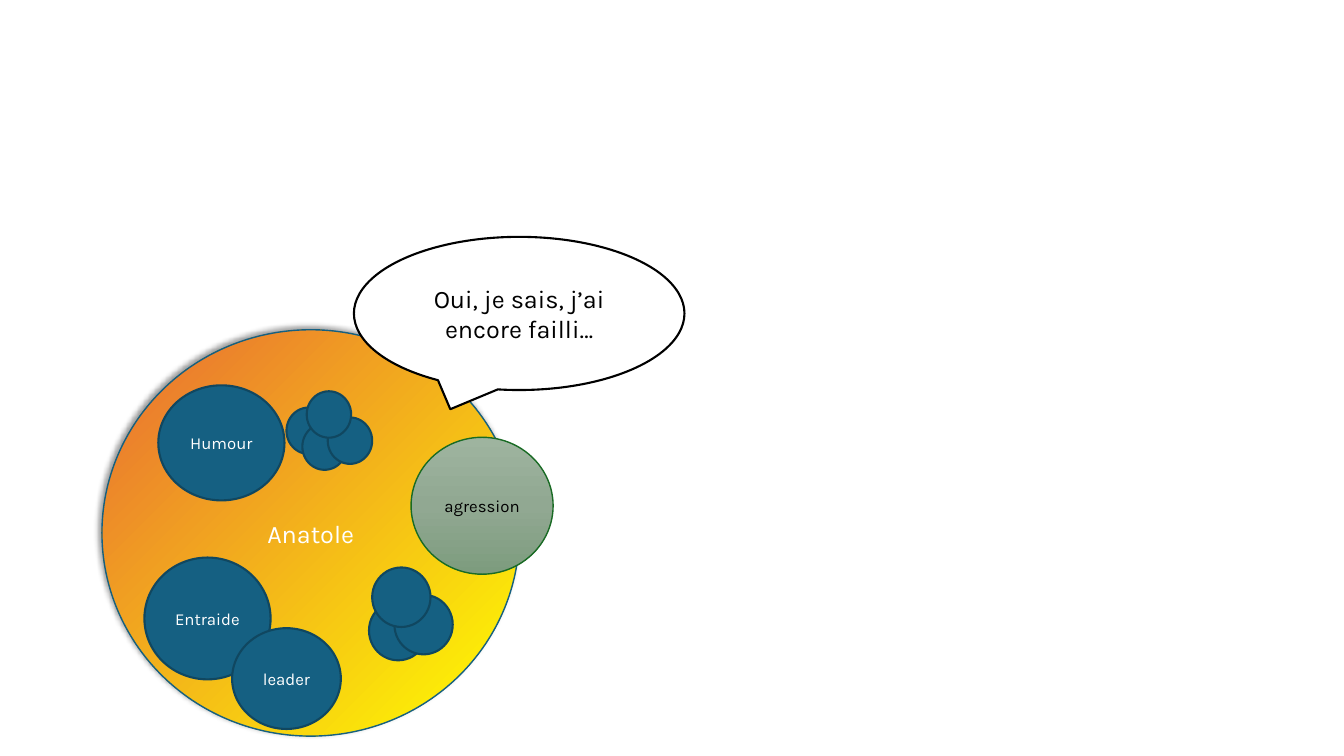
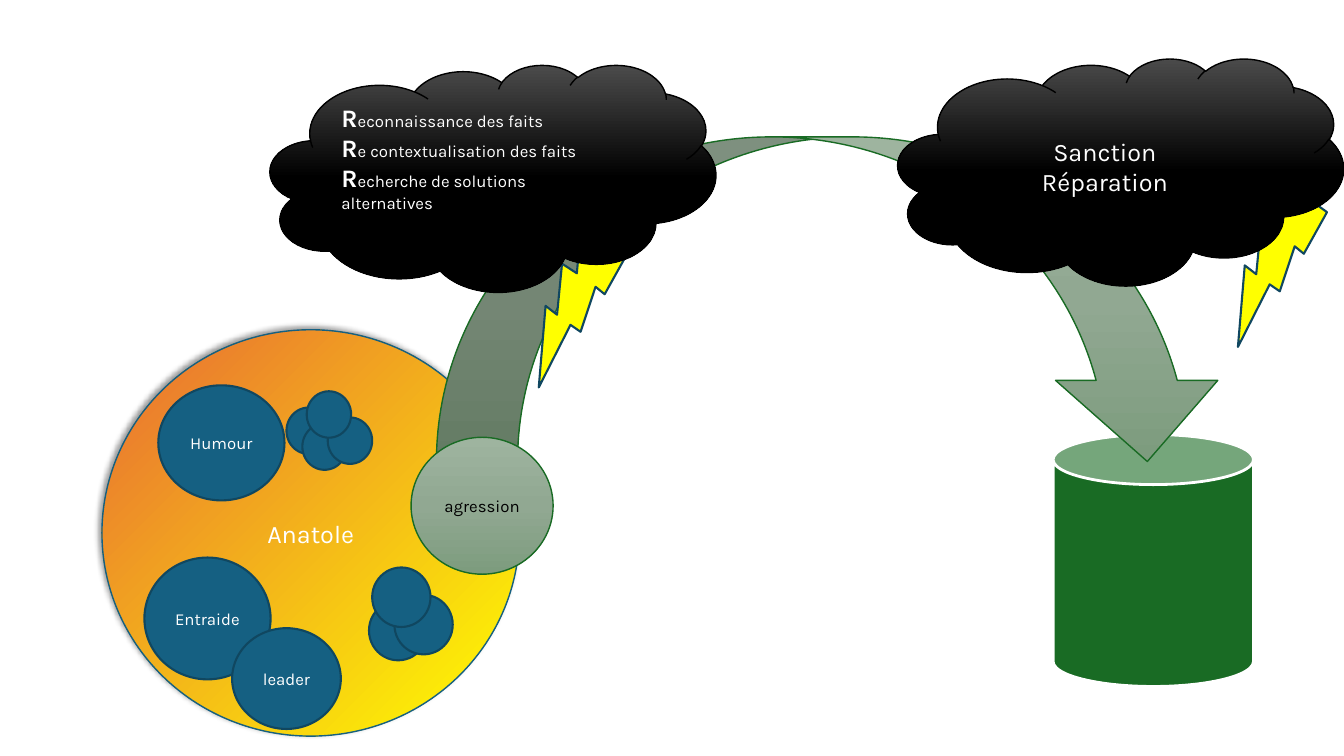
from lxml.etree import SubElement
from pptx import Presentation
from pptx.dml.color import RGBColor
from pptx.enum.shapes import MSO_SHAPE
from pptx.enum.text import MSO_ANCHOR, PP_ALIGN
from pptx.oxml.ns import qn
from pptx.util import Cm, Pt

FONT = "Karla"
WHITE, BLACK = "FFFFFF", "000000"
BLUE, DARK_BLUE = "156082", "104760"
GREEN, YELLOW = "196B24", "FFFF00"

# Gradients: clockwise angle, then (position in %, colour)
SUNNY = (225, [(0, YELLOW), (96, "E97132"), (100, "FFC000")])
SAGE = (90, [(0, "9EB49F"), (50, "91A892"), (100, "7D9C7E")])
STORM = (90, [(0, "4B4B4B"), (50, BLACK), (100, BLACK)])

# Boxes in cm: left, top, width, height
PERSON_BOX = (2.57, 8.31, 10.52, 10.24)
SPEECH_BOX = (8.92, 5.97, 8.33, 3.86)
CAN_BOX = (26.54, 10.95, 5.05, 6.35)
ARROW_BOX = (11, 3.45, 19.96, 8.18)
FACTS_BOX = (6.81, 1.63, 11.23, 5.72)
SANCTION_BOX = (22.63, 1.47, 11.23, 5.72)

# Traits, relative to the person's box
TRAITS = [
    ("Entraide", 1.07, 5.74, 3.18, 3.07),
    ("Humour", 1.42, 1.4, 3.18, 2.9),
    ("leader", 3.28, 7.52, 2.74, 2.54),
]
# Clusters of unnamed traits: size of a circle, then their places
CLUSTERS = [
    ((1.12, 1.17), [(4.65, 1.96), (5.05, 2.36), (5.69, 2.21), (5.16, 1.55)]),
    ((1.47, 1.5), [(6.73, 6.83), (7.37, 6.68), (6.81, 5.99)]),
]


def color(hex_value):
    return RGBColor.from_string(hex_value)


def inside(box, left, top, width, height):
    """Turn a place relative to a box into a place on the slide."""
    return box[0] + left, box[1] + top, width, height


def paint_gradient(shape, angle, stops):
    shape.fill.gradient()
    shape.fill.gradient_angle = 360 - angle
    stop_list = shape._element.spPr.find(qn("a:gradFill")).find(qn("a:gsLst"))
    for old_stop in list(stop_list):
        stop_list.remove(old_stop)
    for position, hex_value in stops:
        stop = SubElement(stop_list, qn("a:gs"), pos=str(position * 1000))
        SubElement(stop, qn("a:srgbClr"), val=hex_value)


def add_glow_shadow(shape):
    effects = shape._element.spPr.find(qn("a:effectLst"))
    shadow = SubElement(effects, qn("a:outerShdw"), blurRad=str(Pt(4)),
                        dist=str(Pt(3)), dir=str(225 * 60000),
                        algn="br", rotWithShape="0")
    tint = SubElement(shadow, qn("a:srgbClr"), val=BLACK)
    SubElement(tint, qn("a:alpha"), val="40000")


def format_run(run, size, ink, bold=False):
    run.font.name = FONT
    run.font.size = Pt(size)
    run.font.bold = bold
    run.font.color.rgb = color(ink)


def add_figure(slide, kind, box, fill, line, line_width=1.5,
               text="", size=12, ink=WHITE):
    figure = slide.shapes.add_shape(kind, *(Cm(length) for length in box))
    figure.shadow.inherit = False
    if isinstance(fill, str):
        figure.fill.solid()
        figure.fill.fore_color.rgb = color(fill)
    else:
        paint_gradient(figure, *fill)
    figure.line.color.rgb = color(line)
    figure.line.width = Pt(line_width)
    if text:
        frame = figure.text_frame
        frame.word_wrap = True
        frame.vertical_anchor = MSO_ANCHOR.MIDDLE
        frame.text = text
        for paragraph in frame.paragraphs:
            paragraph.alignment = PP_ALIGN.CENTER
            for run in paragraph.runs:
                format_run(run, size, ink)
    return figure


def add_person(slide, box):
    """The person, made up of named and unnamed traits."""
    person = add_figure(slide, MSO_SHAPE.OVAL, box, SUNNY, BLUE, 1,
                        "Anatole", 18)
    add_glow_shadow(person)
    for trait, *place in TRAITS:
        add_figure(slide, MSO_SHAPE.OVAL, inside(box, *place),
                   BLUE, DARK_BLUE, text=trait)
    for circle_size, places in CLUSTERS:
        for place in places:
            add_figure(slide, MSO_SHAPE.OVAL,
                       inside(box, *place, *circle_size), BLUE, DARK_BLUE)


def add_aggression(slide, person_box):
    """The behaviour, on the right edge of the person."""
    add_figure(slide, MSO_SHAPE.OVAL, inside(person_box, 7.79, 2.71, 3.58, 3.45),
               SAGE, GREEN, 1, "agression", ink=BLACK)


def add_storm(slide, box, bolt_left, bolt_top, text, size):
    """A dark cloud in front of its lightning bolt."""
    bolt = add_figure(slide, MSO_SHAPE.LIGHTNING_BOLT,
                      inside(box, bolt_left, bolt_top, 3.25, 3.56),
                      YELLOW, DARK_BLUE)
    bolt.rotation = 62.5
    return add_figure(slide, MSO_SHAPE.CLOUD, box, STORM, BLACK, 1, text, size)


def emphasise_initials(cloud):
    """Left-align the lines and enlarge the first letter of each."""
    cloud.text_frame.margin_bottom = Cm(0.89)
    for paragraph in cloud.text_frame.paragraphs:
        paragraph.alignment = PP_ALIGN.LEFT
        initial = paragraph.runs[0]
        rest = paragraph.add_run()
        initial.text, rest.text = initial.text[0], initial.text[1:]
        format_run(initial, 18, WHITE, bold=True)
        format_run(rest, 12, WHITE)


def build_admission_slide(slide):
    add_person(slide, PERSON_BOX)
    add_aggression(slide, PERSON_BOX)
    add_figure(slide, MSO_SHAPE.OVAL_CALLOUT, SPEECH_BOX, WHITE, BLACK,
               text="Oui, je sais, j’ai encore failli…", size=18, ink=BLACK)


def build_repair_slide(slide):
    add_person(slide, PERSON_BOX)
    # The way from the behaviour to the bin
    add_figure(slide, MSO_SHAPE.CAN, CAN_BOX, GREEN, WHITE, 2)
    add_figure(slide, MSO_SHAPE.CURVED_DOWN_ARROW, ARROW_BOX, SAGE, GREEN, 1)
    add_aggression(slide, PERSON_BOX)
    # The two steps on the way
    facts = add_storm(slide, FACTS_BOX, 5.97, 4.09,
                      "Reconnaissance des faits\n"
                      "Re contextualisation des faits\n"
                      "Recherche de solutions alternatives", 12)
    emphasise_initials(facts)
    add_storm(slide, SANCTION_BOX, 7.77, 3.23, "Sanction\nRéparation", 18)


def main():
    deck = Presentation()
    deck.slide_width, deck.slide_height = Cm(33.87), Cm(19.05)
    blank_layout = deck.slide_layouts[6]
    for build in (build_admission_slide, build_repair_slide):
        build(deck.slides.add_slide(blank_layout))
    deck.save("out.pptx")


if __name__ == "__main__":
    main()
